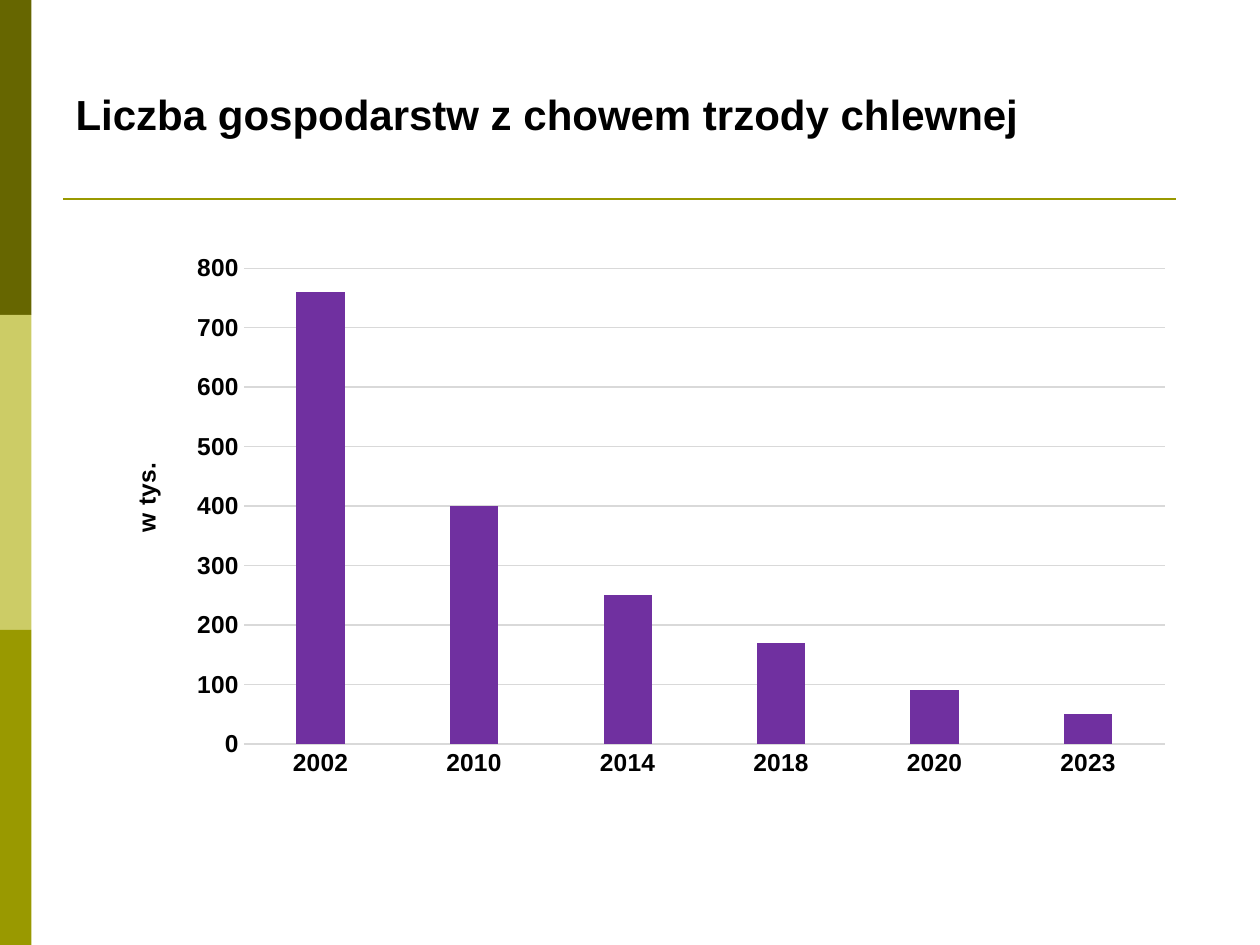
from lxml import etree
from pptx import Presentation
from pptx import util as u
from pptx.chart import data as chart_data
from pptx.dml import color
from pptx.enum import chart as ch, shapes, text
from pptx.oxml import ns

COLORS = {"dark": "666600", "light": "CCCC66", "olive": "999900",
          "bar": "7030A0", "grid": "D9D9D9", "text": "000000"}
Inches = u.Inches


def rgb(name):
    return color.RGBColor.from_string(COLORS[name])


def add_layout(parent, position, **values):
    layout = etree.Element(ns.qn("c:layout"))
    manual = etree.SubElement(layout, ns.qn("c:manualLayout"))
    for tag, value in values.items():
        etree.SubElement(manual, ns.qn("c:" + tag)).set("val", str(value))
    for old in parent.findall(ns.qn("c:layout")):
        parent.remove(old)
    parent.insert(position, layout)


presentation = Presentation()
presentation.slide_width = Inches(10)
presentation.slide_height = Inches(7.5)
slide = presentation.slides.add_slide(presentation.slide_layouts[5])

for index, name in enumerate(["dark", "light", "olive"]):
    band = slide.shapes.add_shape(shapes.MSO_SHAPE.RECTANGLE, 0,
                                  Inches(2.5 * index), Inches(0.25), Inches(2.5))
    band.shadow.inherit = False
    band.fill.solid()
    band.fill.fore_color.rgb = rgb(name)
    band.line.fill.background()

rule = slide.shapes.add_connector(shapes.MSO_CONNECTOR.STRAIGHT, Inches(0.5),
                                  Inches(1.58), Inches(9.33), Inches(1.58))
rule.line.color.rgb = rgb("olive")
rule.line.width = u.Pt(1.5)
etree.SubElement(rule.element.spPr, ns.qn("a:effectLst"))

title = slide.shapes.title
title.left, title.top, title.width, title.height = map(Inches, (0.5, 0.3, 9, 0.85))
title.text_frame.vertical_anchor = text.MSO_ANCHOR.BOTTOM
paragraph = title.text_frame.paragraphs[0]
paragraph.alignment = text.PP_ALIGN.LEFT
run = paragraph.add_run()
run.text = "Liczba gospodarstw z chowem trzody chlewnej"
run.font.name = "Arial"
run.font.size = u.Pt(24)
run.font.bold = True
run.font.color.rgb = rgb("text")

farms = chart_data.CategoryChartData(number_format="0")
farms.categories = ["2002", "2010", "2014", "2018", "2020", "2023"]
farms.add_series("Series 1", [760, 400, 250, 170, 90, 50])
chart = slide.shapes.add_chart(
    ch.XL_CHART_TYPE.COLUMN_CLUSTERED, Inches(0.83), Inches(1.94),
    Inches(8.5), Inches(4.72), farms).chart
chart.has_legend = False
chart.has_title = False
chart.font.name = "Arial"
chart.font.size = u.Pt(14)
chart.font.bold = True
chart.font.color.rgb = rgb("text")

plot = chart.plots[0]
plot.gap_width = 219
plot.overlap = -27
plot.vary_by_categories = False
series = plot.series[0]
series.format.fill.solid()
series.format.fill.fore_color.rgb = rgb("bar")

category_axis, value_axis = chart.category_axis, chart.value_axis
for axis in (category_axis, value_axis):
    axis.major_tick_mark = ch.XL_TICK_MARK.NONE
    axis.minor_tick_mark = ch.XL_TICK_MARK.NONE
value_axis.minimum_scale = 0
value_axis.maximum_scale = 800
value_axis.major_unit = 100
value_axis.tick_labels.number_format = "0"
value_axis.tick_labels.number_format_is_linked = False
value_axis.format.line.fill.background()
for line in (category_axis.format.line, value_axis.major_gridlines.format.line):
    line.color.rgb = rgb("grid")
    line.width = u.Pt(0.75)

axis_title = value_axis.axis_title
frame = axis_title.text_frame
run = frame.paragraphs[0].add_run()
run.text = "w tys."
run.font.name = "Arial"
run.font.size = u.Pt(14)
run.font.bold = True
run.font.color.rgb = rgb("text")
body = axis_title._element.find(".//" + ns.qn("a:bodyPr"))
body.set("rot", "-5400000")
body.set("vert", "horz")
add_layout(axis_title._element, 1, xMode="edge", yMode="edge", x=0.02, y=0.36)
add_layout(chart._chartSpace.chart.plotArea, 0, layoutTarget="inner",
           xMode="edge", yMode="edge", x=0.13, y=0.04, w=0.86, h=0.8)

presentation.save("out.pptx")
